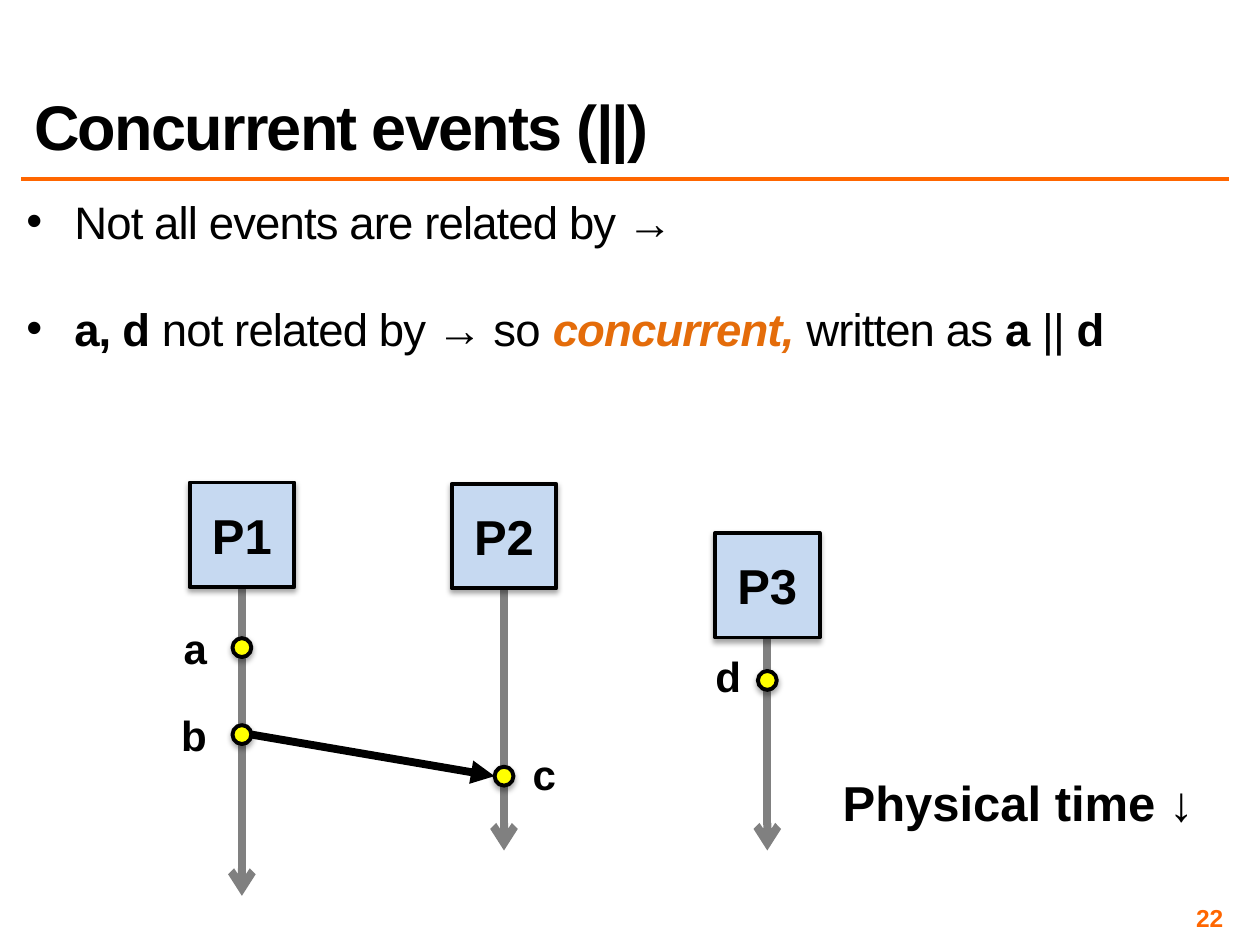
from pptx import Presentation
from pptx.dml.color import RGBColor
from pptx.enum.shapes import MSO_CONNECTOR, MSO_SHAPE
from pptx.enum.text import MSO_ANCHOR, MSO_AUTO_SIZE, PP_ALIGN
from pptx.oxml import parse_xml
from pptx.oxml.ns import nsdecls
from pptx.util import Inches, Pt

BLACK = RGBColor(0x00, 0x00, 0x00)
ORANGE = RGBColor(0xFF, 0x66, 0x00)
DARK_ORANGE = RGBColor(0xE4, 0x6C, 0x0A)
GRAY = RGBColor(0x80, 0x80, 0x80)
BLUE = RGBColor(0xC6, 0xD9, 0xF1)
YELLOW = RGBColor(0xFF, 0xFF, 0x00)

TITLE = "Concurrent events (||)"
PLAIN = {"bold": False}
BOLD = {"bold": True}
KEY = {"bold": True, "italic": True, "color": DARK_ORANGE}
BULLETS = [
    (5.2, [("Not all events are related by →", PLAIN)]),
    (36.5, [("a, d", BOLD), (" not related by → so ", PLAIN), ("concurrent, ", KEY),
            ("written as ", PLAIN), ("a", BOLD), (" || ", PLAIN), ("d", BOLD)]),
]
PROCESSES = [("P1", 1.92, 3.83, 7.11), ("P2", 4.0, 3.84, 6.75), ("P3", 6.09, 4.23, 6.75)]
EVENTS = [("a", 1.92, 5.14, 1.35, 4.89), ("b", 1.92, 5.83, 1.34, 5.58),
          ("c", 4.0, 6.16, 4.12, 5.89), ("d", 6.09, 5.4, 5.58, 5.11)]
MESSAGE = ("b", "c")
BOX_SIZE = 0.83
DOT_SIZE = 0.15

deck = Presentation()
deck.slide_width, deck.slide_height = Inches(10), Inches(7.5)
page = deck.slides.add_slide(deck.slide_layouts[1])


def place(shape, *area):
    for name, value in zip(("left", "top", "width", "height"), area):
        setattr(shape, name, Inches(value))


def add_span(para, text, size, color=BLACK, spacing=0, **formats):
    span = para.add_run()
    span.text = text
    for name, value in {"name": "Arial", "size": Pt(size), **formats}.items():
        setattr(span.font, name, value)
    span.font.color.rgb = color
    if spacing:
        span.font._element.set("spc", str(spacing))


def set_frame(frame, **formats):
    for name, value in {"auto_size": MSO_AUTO_SIZE.NONE, **formats}.items():
        setattr(frame, name, value)


def margins(inches):
    return {f"margin_{side}": Inches(inches) for side in ("left", "top", "right", "bottom")}


def add_label(text, area, size, color=BLACK, align=PP_ALIGN.CENTER, **formats):
    label = page.shapes.add_textbox(*map(Inches, area))
    set_frame(label.text_frame, **formats)
    para = label.text_frame.paragraphs[0]
    para.alignment = align
    add_span(para, text, size, color, bold=True)


def add_line(start, end, color, width, head=None):
    line = page.shapes.add_connector(MSO_CONNECTOR.STRAIGHT, *map(Inches, (*start, *end)))
    line.line.color.rgb = color
    line.line.width = Pt(width)
    if head:
        line.line._get_or_add_ln().append(
            parse_xml(f'<a:tailEnd {nsdecls("a")} type="{head}"/>'))
    line._element.spPr.append(parse_xml(f'<a:effectLst {nsdecls("a")}/>'))
    return line


def add_node(kind, center, top, size, fill):
    node = page.shapes.add_shape(
        kind, *map(Inches, (center - size / 2, top, size, size)))
    node.fill.solid()
    node.fill.fore_color.rgb = fill
    node.line.color.rgb = BLACK
    node.line.width = Pt(2.25)
    node._element.spPr.append(parse_xml(
        f'<a:effectLst {nsdecls("a")}><a:outerShdw blurRad="{Pt(3.1)}" dist="{Pt(1.8)}" '
        'dir="5400000" rotWithShape="0"><a:srgbClr val="000000"><a:alpha val="35000"/>'
        '</a:srgbClr></a:outerShdw></a:effectLst>'))
    return node


add_line((0.17, 1.42), (9.75, 1.42), ORANGE, 2)

title = page.shapes.title
place(title, 0.17, 0.17, 9.58, 1.17)
set_frame(title.text_frame, vertical_anchor=MSO_ANCHOR.BOTTOM, word_wrap=True)
para = title.text_frame.paragraphs[0]
para.alignment = PP_ALIGN.LEFT
para.line_spacing = 0.8
add_span(para, TITLE, 36, spacing=-100, bold=True)

body = page.placeholders[1]
place(body, 0.17, 1.58, 9.58, 1.62)
set_frame(body.text_frame, word_wrap=True, **margins(0.04))
for index, (gap, spans) in enumerate(BULLETS):
    para = body.text_frame.add_paragraph() if index else body.text_frame.paragraphs[0]
    para.line_spacing = 0.8
    para.space_before = Pt(gap)
    properties = para._p.get_or_add_pPr()
    properties.set("marL", str(Inches(0.38)))
    properties.set("indent", str(Inches(-0.38)))
    properties.append(parse_xml(f'<a:buChar {nsdecls("a")} char="•"/>'))
    for text, formats in spans:
        add_span(para, text, 26, spacing=-50, **formats)

for name, center, top, end in PROCESSES:
    box = add_node(MSO_SHAPE.FLOWCHART_PROCESS, center, top, BOX_SIZE, BLUE)
    set_frame(box.text_frame, vertical_anchor=MSO_ANCHOR.MIDDLE)
    para = box.text_frame.paragraphs[0]
    para.alignment = PP_ALIGN.CENTER
    add_span(para, name, 28, bold=True)
    timeline = add_line((center, top + BOX_SIZE), (center, end), GRAY, 4.5, "arrow")
    timeline.begin_connect(box, 2)
    box._element.addprevious(timeline._element)

dots = {}
for name, center, middle, left, top in EVENTS:
    add_node(MSO_SHAPE.OVAL, center, middle - DOT_SIZE / 2, DOT_SIZE, YELLOW)
    add_label(name, (left, top, 0.4, 0.5), 24, word_wrap=False)
    dots[name] = (center, middle)

(send_x, send_y), (receive_x, receive_y) = (dots[name] for name in MESSAGE)
add_line((send_x + DOT_SIZE / 2, send_y), (receive_x - DOT_SIZE / 2, receive_y),
         BLACK, 4.5, "triangle")

add_label("Physical time ↓", (6.57, 6.08, 3.02, 0.57), 28, word_wrap=False)
add_label("22", (7.42, 7.17, 2.33, 0.23), 14, ORANGE, PP_ALIGN.RIGHT,
          word_wrap=True, vertical_anchor=MSO_ANCHOR.MIDDLE, **margins(0.04))

deck.save("out.pptx")
